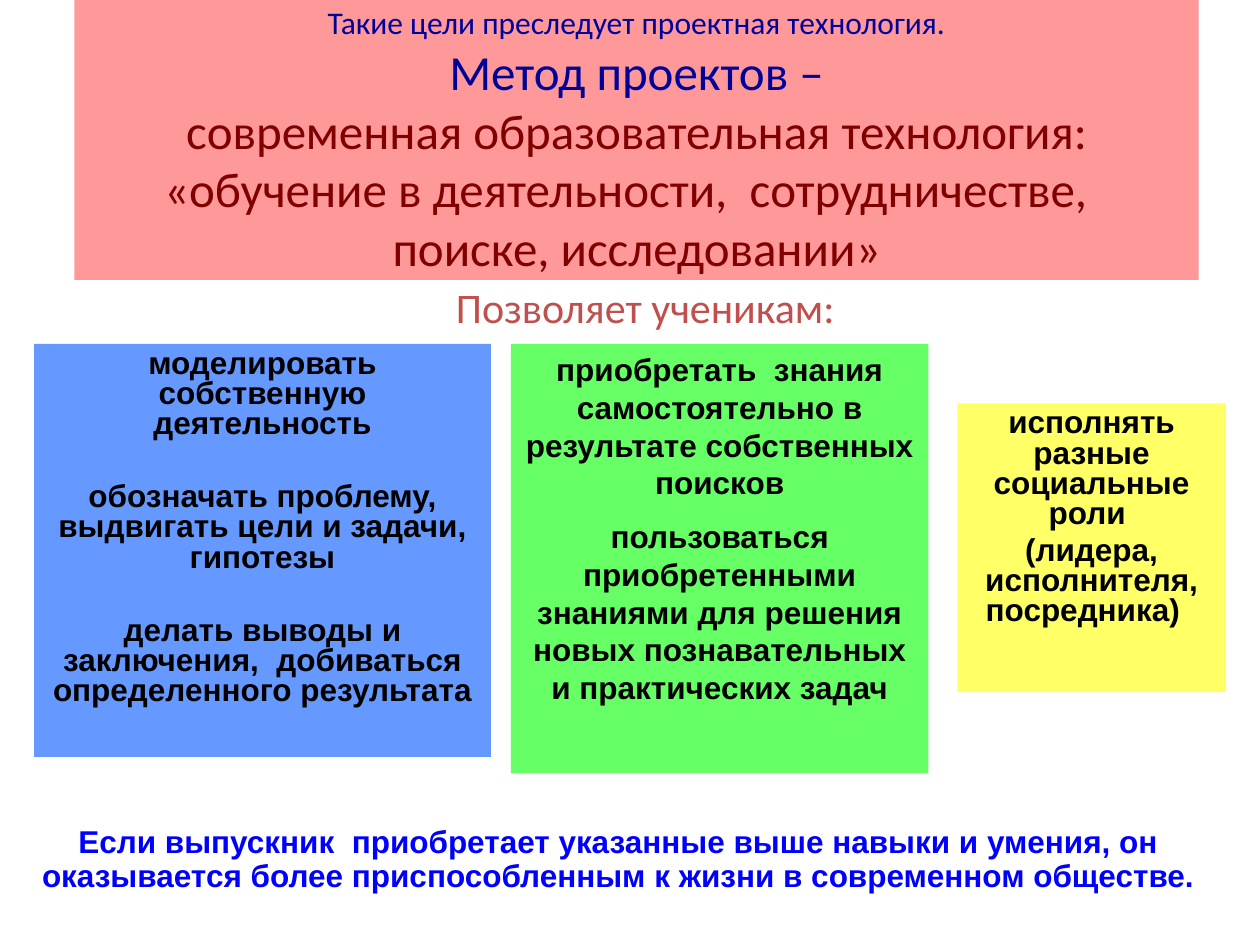
from pptx import Presentation
from pptx.dml.color import RGBColor
from pptx.enum.shapes import MSO_SHAPE
from pptx.enum.text import MSO_ANCHOR, MSO_AUTO_SIZE, PP_ALIGN
from pptx.oxml.ns import qn
from pptx.util import Pt

COLORS = {
    "rose": "FF9999", "green": "66FF66", "blue": "6699FF", "yellow": "FFFF66",
    "navy": "000099", "maroon": "800000", "brick": "C0504D",
    "ink": "000000", "conclusion": "0000FF",
}

SKILLS = [
    ("green", (292, 196.5, 238.5, 245.5), 1.0, 9, [
        "приобретать  знания самостоятельно в результате собственных поисков",
        "пользоваться приобретенными знаниями для решения новых "
        "познавательных и практических задач",
    ]),
    ("blue", (19.5, 196.5, 261, 236), 0.8, 24.4, [
        "моделировать собственную деятельность",
        "обозначать проблему, выдвигать цели и задачи, гипотезы",
        "делать выводы и заключения,  добиваться определенного результата",
    ]),
    ("yellow", (547, 230.5, 153.5, 165), 0.8, 3.6, [
        "исполнять разные социальные роли ",
        "(лидера, исполнителя, посредника)  ",
    ]),
]


def rgb(color):
    return RGBColor.from_string(COLORS[color])


def place(part, box):
    part.left, part.top, part.width, part.height = map(Pt, box)


def fill_with(part, color):
    part.fill.solid()
    part.fill.fore_color.rgb = rgb(color)


def add_run(paragraph, text, size, color, font="Calibri", bold=False):
    run = paragraph.add_run()
    run.text = text
    run.font.name = font
    run.font.size = Pt(size)
    run.font.bold = bold
    run.font.color.rgb = rgb(color)


def prepare_frame(part, anchor):
    frame = part.text_frame
    frame.word_wrap = True
    frame.auto_size = MSO_AUTO_SIZE.NONE
    frame.vertical_anchor = anchor
    return frame


def write_statements(part, statements, color, spacing, gap):
    frame = prepare_frame(part, MSO_ANCHOR.TOP)
    for index, statement in enumerate(statements):
        paragraph = frame.add_paragraph() if index else frame.paragraphs[0]
        paragraph.alignment = PP_ALIGN.CENTER
        paragraph.line_spacing = spacing
        paragraph.space_before = Pt(gap if index else 0)
        add_run(paragraph, statement, 18, color, "Arial", True)


def write_title(title):
    place(title, (42.5, 0, 642.5, 160))
    fill_with(title, "rose")
    paragraph = prepare_frame(title, MSO_ANCHOR.MIDDLE).paragraphs[0]
    paragraph.alignment = PP_ALIGN.CENTER
    lines = [
        ("Такие цели преследует проектная технология.", 18, "navy"),
        ("Метод проектов –", 28, "navy"),
        (" современная образовательная технология: ", 28, "maroon"),
        ("«обучение в деятельности,  сотрудничестве,   поиске, исследовании»",
         28, "maroon"),
    ]
    for index, (text, size, color) in enumerate(lines):
        if index:
            paragraph.add_line_break()
        add_run(paragraph, text, size, color)


def write_lead_in(body):
    place(body, (196, 157, 345.5, 39.5))
    paragraph = prepare_frame(body, MSO_ANCHOR.TOP).paragraphs[0]
    properties = paragraph._p.get_or_add_pPr()
    properties.set("marL", str(Pt(27)))
    properties.set("indent", str(Pt(-27)))
    properties.append(properties.makeelement(qn("a:buNone"), {}))
    paragraph.alignment = PP_ALIGN.CENTER
    paragraph.space_before = Pt(0)
    add_run(paragraph, "Позволяет ученикам:", 24, "brick")


def add_skill_panel(slide, color, box, spacing, gap, statements):
    panel = slide.shapes.add_shape(MSO_SHAPE.RECTANGLE, *map(Pt, box))
    panel.shadow.inherit = False
    fill_with(panel, color)
    panel.line.fill.background()
    write_statements(panel, statements, "ink", spacing, gap)


def add_conclusion(slide):
    conclusion = slide.shapes.add_textbox(*map(Pt, (14.5, 468.5, 677.5, 46)))
    write_statements(conclusion, [
        "Если выпускник  приобретает указанные выше навыки и умения, он "
        "оказывается более приспособленным к жизни в современном обществе.",
    ], "conclusion", 0.9, 0)


def main():
    presentation = Presentation()
    presentation.slide_width, presentation.slide_height = Pt(720), Pt(540)
    slide = presentation.slides.add_slide(presentation.slide_layouts[1])
    write_title(slide.shapes.title)
    write_lead_in(slide.placeholders[1])
    for skill in SKILLS:
        add_skill_panel(slide, *skill)
    add_conclusion(slide)
    presentation.save("out.pptx")


if __name__ == "__main__":
    main()
